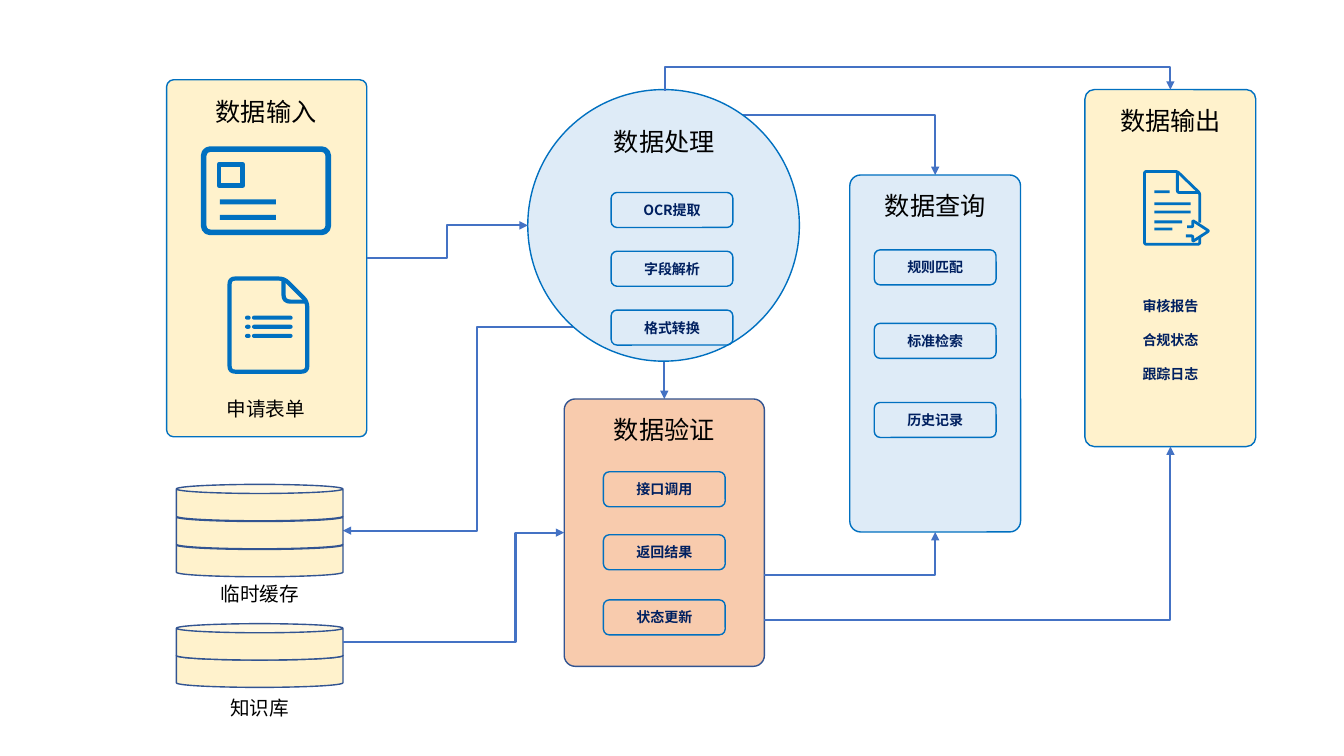
from dataclasses import dataclass

from lxml import etree
from pptx import Presentation
from pptx import util as u
from pptx.dml.color import RGBColor
from pptx.enum import shapes, text
from pptx.oxml.ns import qn

KIND = shapes.MSO_SHAPE


@dataclass(frozen=True)
class Theme:
    font: str = "Noto Sans CJK SC"
    black: str = "000000"
    navy: str = "002060"
    blue: str = "0070C0"
    edge: str = "325491"
    arrow: str = "4472C4"
    cream: str = "FFF2CC"
    sky: str = "DEEBF7"
    peach: str = "F8CBAD"
    title: int = 18
    label: int = 14
    tag: int = 10


THEME = Theme()


def paint(shape, fill=None, line=None, width=1):
    shape.shadow.inherit = False
    if fill:
        shape.fill.solid()
        shape.fill.fore_color.rgb = RGBColor.from_string(fill)
    else:
        shape.fill.background()
    if line:
        shape.line.color.rgb = RGBColor.from_string(line)
        shape.line.width = u.Pt(width)
    else:
        shape.line.fill.background()


def add_box(page, kind, frame, fill=None, line=None, width=1, round_by=None):
    box = page.shapes.add_shape(kind, *map(u.Pt, frame))
    paint(box, fill, line, width)
    if round_by is not None:
        box.adjustments[0] = round_by
    return box


def write(box, words, size, color, bold=False, spacing=None):
    box.text_frame.text = words
    for para in box.text_frame.paragraphs:
        para.alignment = text.PP_ALIGN.CENTER
        if spacing:
            para.line_spacing = spacing
        for span in para.runs:
            span.font.size = u.Pt(size)
            span.font.bold = bold
            span.font.name = THEME.font
            span.font.color.rgb = RGBColor.from_string(color)
            east = etree.SubElement(span.font._element, qn("a:ea"))
            east.set("typeface", THEME.font)


def add_label(page, words, center, top, size):
    width, height = size * 4 + 15, size * 1.2 + 7.2
    box = page.shapes.add_textbox(*map(u.Pt, (center - width / 2, top, width, height)))
    box.text_frame.word_wrap = False
    write(box, words, size, THEME.black)


def add_tags(page, left, tags):
    for words, top in tags:
        box = add_box(page, KIND.ROUNDED_RECTANGLE, (left, top, 87, 25), None, THEME.blue)
        box.text_frame.vertical_anchor = text.MSO_ANCHOR.MIDDLE
        write(box, words, THEME.tag, THEME.navy, True)


def add_store(page, tops):
    for top in tops:
        add_box(page, KIND.CAN, (126, top, 119, 26), THEME.cream, THEME.edge)


def add_arrow(page, start, end, shape="bentConnector3", bend=None, turn=0):
    kind = shapes.MSO_CONNECTOR.STRAIGHT if shape == "line" else shapes.MSO_CONNECTOR.ELBOW
    arrow = page.shapes.add_connector(kind, *map(u.Pt, (*start, *end)))
    arrow.line.color.rgb = RGBColor.from_string(THEME.arrow)
    arrow.line.width = u.Pt(1.5)
    etree.SubElement(arrow.line._get_or_add_ln(), qn("a:tailEnd")).set("type", "triangle")
    props = arrow._element.spPr
    etree.SubElement(props, qn("a:effectLst"))
    props.find(qn("a:xfrm")).set("rot", str(turn * 60000))
    outline = props.find(qn("a:prstGeom"))
    outline.set("prst", shape)
    if bend is not None:
        guide = etree.SubElement(outline.find(qn("a:avLst")), qn("a:gd"))
        guide.set("name", "adj1")
        guide.set("fmla", f"val {round(bend * 100000)}")
    return arrow


def toward(point, goal, reach):
    dx, dy = goal[0] - point[0], goal[1] - point[1]
    part = reach / (dx * dx + dy * dy) ** 0.5
    return point[0] + dx * part, point[1] + dy * part


def soften(points, radius):
    yield points[0]
    for before, corner, after in zip(points, points[1:], points[2:]):
        first, last = toward(corner, before, radius), toward(corner, after, radius)
        for step in range(5):
            t = step / 4
            yield tuple((1 - t) ** 2 * a + 2 * t * (1 - t) * b + t * t * c
                        for a, b, c in zip(first, corner, last))
    yield points[-1]


def add_stroke(page, points, width, radius):
    start, *rest = [tuple(map(u.Pt, point)) for point in soften(points, radius)]
    builder = page.shapes.build_freeform(*start)
    builder.add_line_segments(rest, close=False)
    paint(builder.convert_to_shape(), None, THEME.blue, width)


def add_bars(page, frames, kind=KIND.RECTANGLE):
    for frame in frames:
        add_box(page, kind, frame, THEME.blue, round_by=0.5 if kind == KIND.ROUNDED_RECTANGLE else None)


def draw_card(page):
    add_box(page, KIND.ROUNDED_RECTANGLE, (145.5, 106.5, 89, 59.5), None, THEME.blue, 4, 0.08)
    add_box(page, KIND.RECTANGLE, (156.5, 117.5, 17, 15), None, THEME.blue, 3.5)
    add_bars(page, [(157, top, 40, 3.6) for top in (142.5, 153.5)])


def draw_form(page):
    add_stroke(page, [(190, 199), (203, 199), (219.5, 215.5), (219.5, 265.5),
                      (164, 265.5), (164, 199), (190, 199)], 3, 4)
    add_stroke(page, [(202.5, 199), (202.5, 215.5), (219.5, 215.5)], 3, 5)
    add_bars(page, [(left, 225.5 + 6.5 * row, width, 2.9)
                    for row in range(3) for left, width in ((175, 4), (180, 29))],
             KIND.ROUNDED_RECTANGLE)


def draw_report(page):
    add_stroke(page, [(857, 159), (857, 138), (841, 122.5), (817.5, 122.5),
                      (817.5, 174.5), (857, 174.5), (857, 170)], 2, 1.5)
    add_stroke(page, [(841, 122.5), (841, 137.5), (857, 137.5)], 2, 1.5)
    add_stroke(page, [(847, 168.5), (852, 168.5), (852, 172.5), (863.5, 165),
                      (852, 157.5), (852, 162), (848, 162)], 2, 1)
    add_bars(page, [(824.5, top, width, 2) for top, width in
                    ((136, 11), (144.5, 26), (150.5, 26), (157.5, 20), (162.5, 13))])


def main():
    deck = Presentation()
    deck.slide_width, deck.slide_height = u.Pt(960), u.Pt(540)
    page = deck.slides.add_slide(deck.slide_layouts[6])
    panel = KIND.ROUNDED_RECTANGLE

    to_query = add_arrow(page, (518.5, 82), (668, 125), "bentConnector2")
    to_check = add_arrow(page, (474.5, 245.5), (474.5, 285), "line")
    add_arrow(page, (436, 233.5), (245, 379), bend=0.5)

    add_box(page, KIND.OVAL, (377, 64, 194, 194), THEME.sky, THEME.blue)
    source = add_box(page, panel, (119, 57, 143, 255), THEME.cream, THEME.blue, round_by=0.035)
    output = add_box(page, panel, (775, 64, 122, 255), THEME.cream, THEME.blue, round_by=0.055)
    add_store(page, (465, 445.5))
    add_store(page, (386, 366, 346))
    check = add_box(page, panel, (403, 285, 143, 191), THEME.peach, THEME.edge, round_by=0.055)
    query = add_box(page, panel, (607, 125, 122, 255), THEME.sky, THEME.blue, round_by=0.064)

    for words, center, top in (("数据输入", 190, 65), ("数据处理", 474.5, 86.5),
                               ("数据输出", 836, 72), ("数据查询", 668, 132.5),
                               ("数据验证", 474.5, 292.5)):
        add_label(page, words, center, top, THEME.title)
    for words, center, top in (("申请表单", 190, 280), ("临时缓存", 185.5, 412),
                               ("知识库", 185.5, 493.5)):
        add_label(page, words, center, top, THEME.label)

    draw_card(page)
    draw_form(page)
    add_tags(page, 436.5, (("OCR提取", 137.5), ("字段解析", 179.5), ("格式转换", 221.5)))
    add_tags(page, 431, (("接口调用", 337), ("返回结果", 382), ("状态更新", 428.5)))
    add_tags(page, 624.5, (("规则匹配", 178.5), ("标准检索", 231), ("历史记录", 287.5)))
    results = add_box(page, panel, (792.5, 193.5, 87, 86.5))
    results.text_frame.vertical_anchor = text.MSO_ANCHOR.MIDDLE
    write(results, "审核报告\n合规状态\n跟踪日志", THEME.tag, THEME.navy, True, 2)
    draw_report(page)

    to_query.end_connect(query, 0)
    to_check.end_connect(check, 0)
    add_arrow(page, (262, 184.5), (377, 161)).begin_connect(source, 3)
    add_arrow(page, (245, 458.5), (403, 380.5), bend=0.78).end_connect(check, 1)
    add_arrow(page, (546, 411), (668, 380), "bentConnector2").end_connect(query, 2)
    add_arrow(page, (546, 443), (836, 319), "bentConnector2").end_connect(output, 2)
    add_arrow(page, (655, -116), (656, 245), bend=17.5, turn=270)

    deck.save("out.pptx")


if __name__ == "__main__":
    main()
